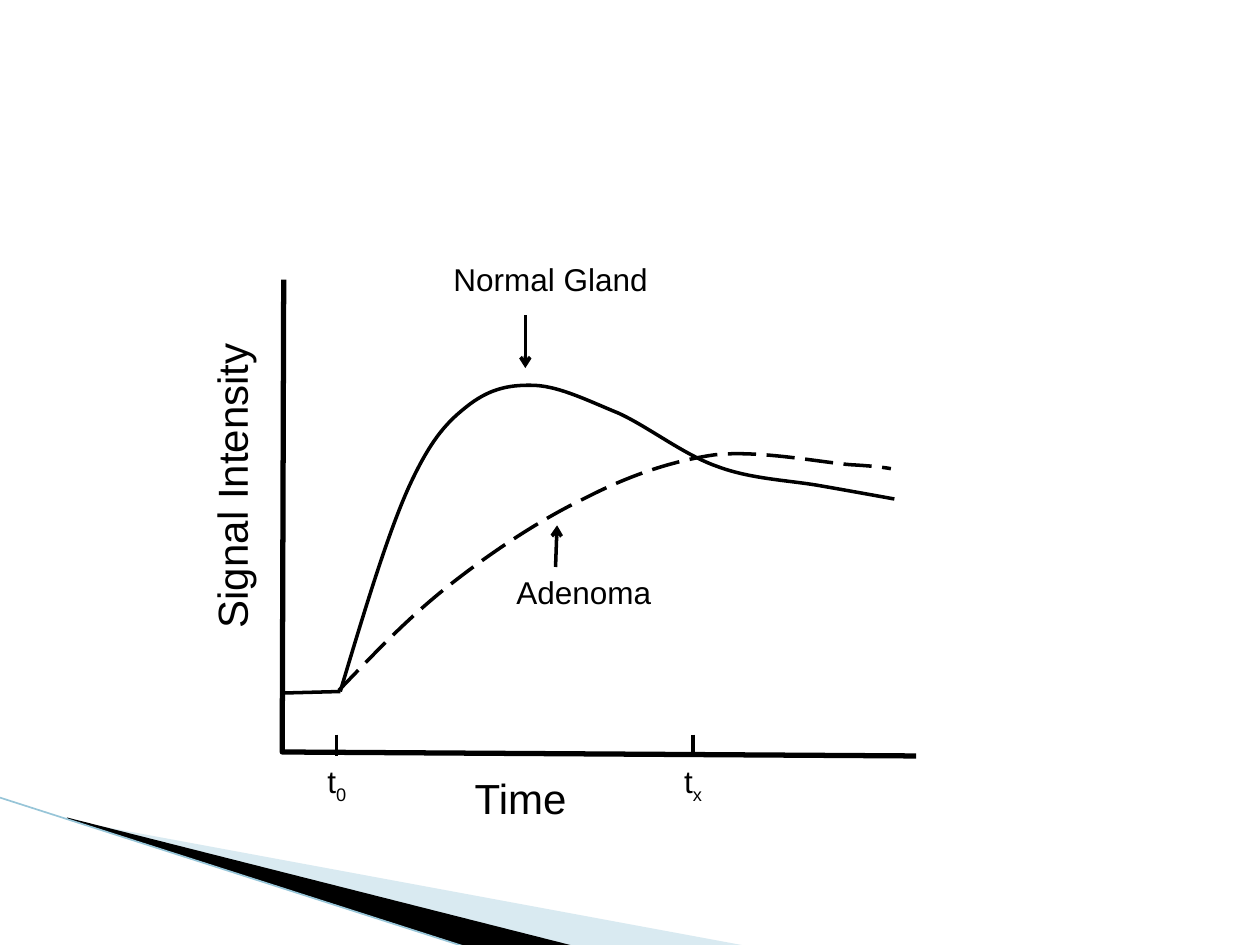
"""Build a slide with signal intensity curves of normal gland and adenoma over time."""
import pptx
import pptx.dml.color
import pptx.enum.dml
import pptx.enum.text
import pptx.enum.shapes
import pptx.oxml
import pptx.oxml.ns
import pptx.util
from pptx.util import Cm

BLACK = pptx.dml.color.RGBColor(0x00, 0x00, 0x00)
PALE_BLUE = pptx.dml.color.RGBColor(0xA0, 0xCB, 0xDC)
EDGE_BLUE = pptx.dml.color.RGBColor(0x97, 0xC5, 0xD8)
FONT = "Arial"

PALE_BAND = [(1.4, 16.54), (15.11, 19.08), (11.58, 19.08), (1.4, 16.51)]
BLACK_BAND = [(1.35, 16.48), (11.61, 19.08), (9.45, 19.1), (1.37, 16.51)]
BAND_EDGE = [(0, 16.08), (9.42, 19.1)]

AXES = [(5.72, 5.64), (5.69, 15.16), (18.47, 15.24)]
NORMAL_CURVE = [
    (6.86, 13.94),
    (7.34, 12.34), (7.82, 10.74), (8.26, 9.78),
    (8.71, 8.81), (9.04, 8.48), (9.47, 8.15),
    (9.91, 7.82), (10.31, 7.75), (10.8, 7.77),
    (11.3, 7.8), (11.86, 8.08), (12.47, 8.33),
    (13.08, 8.61), (13.79, 9.17), (14.45, 9.4),
    (15.11, 9.65), (15.85, 9.68), (16.46, 9.78),
    (17.04, 9.88), (18.03, 10.06), (18.03, 10.06),
]
ADENOMA_CURVE = [
    (6.83, 13.92),
    (7.54, 13.18), (8.23, 12.45), (9.07, 11.79),
    (9.88, 11.15), (10.87, 10.49), (11.76, 10.06),
    (12.65, 9.6), (13.51, 9.3), (14.4, 9.17),
    (15.29, 9.07), (16.54, 9.32), (17.15, 9.37),
    (17.73, 9.4), (17.96, 9.45), (17.96, 9.45),
]
BASELINE = [(5.72, 13.97), (6.86, 13.94)]
ARROWS = [[(10.59, 6.35), (10.59, 7.42)], [(11.2, 11.43), (11.23, 10.59)]]
TICKS = [("0", 6.78), ("x", 13.97)]
TICK_TOP, TICK_BOTTOM = 14.81, 15.24

LABELS = [
    ("Normal Gland", 18, (8.89, 5.11, 4.45, 1.02), 0),
    ("Adenoma", 18, (10.16, 11.43, 4.45, 1.02), 0),
    ("Time", 24, (9.32, 15.44, 2.54, 1.27), 0),
    ("Signal Intensity", 24, (1.37, 8.99, 6.58, 1.27), 270),
]


def add_outline(page, points, closed=False):
    corners = [(Cm(x), Cm(y)) for x, y in points]
    builder = page.shapes.build_freeform(*corners[0], scale=1.0)
    builder.add_line_segments(corners[1:], close=closed)
    outline = builder.convert_to_shape()
    outline.shadow.inherit = False
    return outline


def add_band(page, points, colour, opacity=100):
    band = add_outline(page, points, closed=True)
    band.line.fill.background()
    band.fill.solid()
    band.fill.fore_color.rgb = colour
    if opacity < 100:
        tone = band.fill._xPr.find(".//" + pptx.oxml.ns.qn("a:srgbClr"))
        alpha = tone.makeelement(pptx.oxml.ns.qn("a:alpha"), {"val": str(opacity * 1000)})
        tone.append(alpha)


def style_line(line, width, colour=BLACK):
    line.color.rgb = colour
    line.width = pptx.util.Pt(width)


def add_path(page, points, width, curved=False):
    outline = add_outline(page, points)
    outline.fill.background()
    style_line(outline.line, width)
    if curved:
        segments = list(outline._element.iter(pptx.oxml.ns.qn("a:lnTo")))
        for start in range(0, len(segments), 3):
            first = segments[start]
            bezier = first.makeelement(pptx.oxml.ns.qn("a:cubicBezTo"), {})
            first.addprevious(bezier)
            for segment in segments[start:start + 3]:
                bezier.append(segment[0])
                segment.getparent().remove(segment)
    return outline


def add_line(page, ends, width=2, colour=BLACK, arrow=False):
    start, end = ends
    connector = page.shapes.add_connector(
        pptx.enum.shapes.MSO_CONNECTOR.STRAIGHT, *(Cm(value) for value in start + end))
    style_line(connector.line, width, colour)
    properties = connector._element.spPr
    if arrow:
        line = connector.line._get_or_add_ln()
        line.append(line.makeelement(pptx.oxml.ns.qn("a:tailEnd"), {"type": "arrow"}))
    properties.append(properties.makeelement(pptx.oxml.ns.qn("a:effectLst"), {}))


def add_label(page, text, size, place, rotation=0, subscript=""):
    box = page.shapes.add_textbox(*(Cm(value) for value in place))
    box.rotation = rotation
    frame = box.text_frame
    frame.word_wrap = True
    frame.auto_size = pptx.enum.text.MSO_AUTO_SIZE.SHAPE_TO_FIT_TEXT
    para = frame.paragraphs[0]
    for part in filter(None, (text, subscript)):
        span = para.add_run()
        span.text = part
        span.font.name = FONT
        span.font.size = pptx.util.Pt(size)
        span.font.color.rgb = BLACK
    if subscript:
        span.font._element.set("baseline", "-25000")


def main():
    deck = pptx.Presentation()
    deck.slide_width, deck.slide_height = Cm(25.4), Cm(19.05)
    page = deck.slides.add_slide(deck.slide_layouts[6])

    add_band(page, PALE_BAND, PALE_BLUE, opacity=40)
    add_band(page, BLACK_BAND, BLACK)
    add_line(page, BAND_EDGE, 0.95, EDGE_BLUE)

    add_path(page, AXES, 3)
    add_path(page, NORMAL_CURVE, 2, curved=True)
    add_line(page, BASELINE)
    adenoma = add_path(page, ADENOMA_CURVE, 2, curved=True)
    adenoma.line.dash_style = pptx.enum.dml.MSO_LINE.LONG_DASH

    for ends in ARROWS:
        add_line(page, ends, arrow=True)
    for subscript, x in TICKS:
        add_line(page, [(x, TICK_TOP), (x, TICK_BOTTOM)])
        add_label(page, "t", 18, (x - 0.43, TICK_BOTTOM, 1.07, 1.02), subscript=subscript)
    for label in LABELS:
        add_label(page, *label)

    deck.save("out.pptx")


if __name__ == "__main__":
    main()
